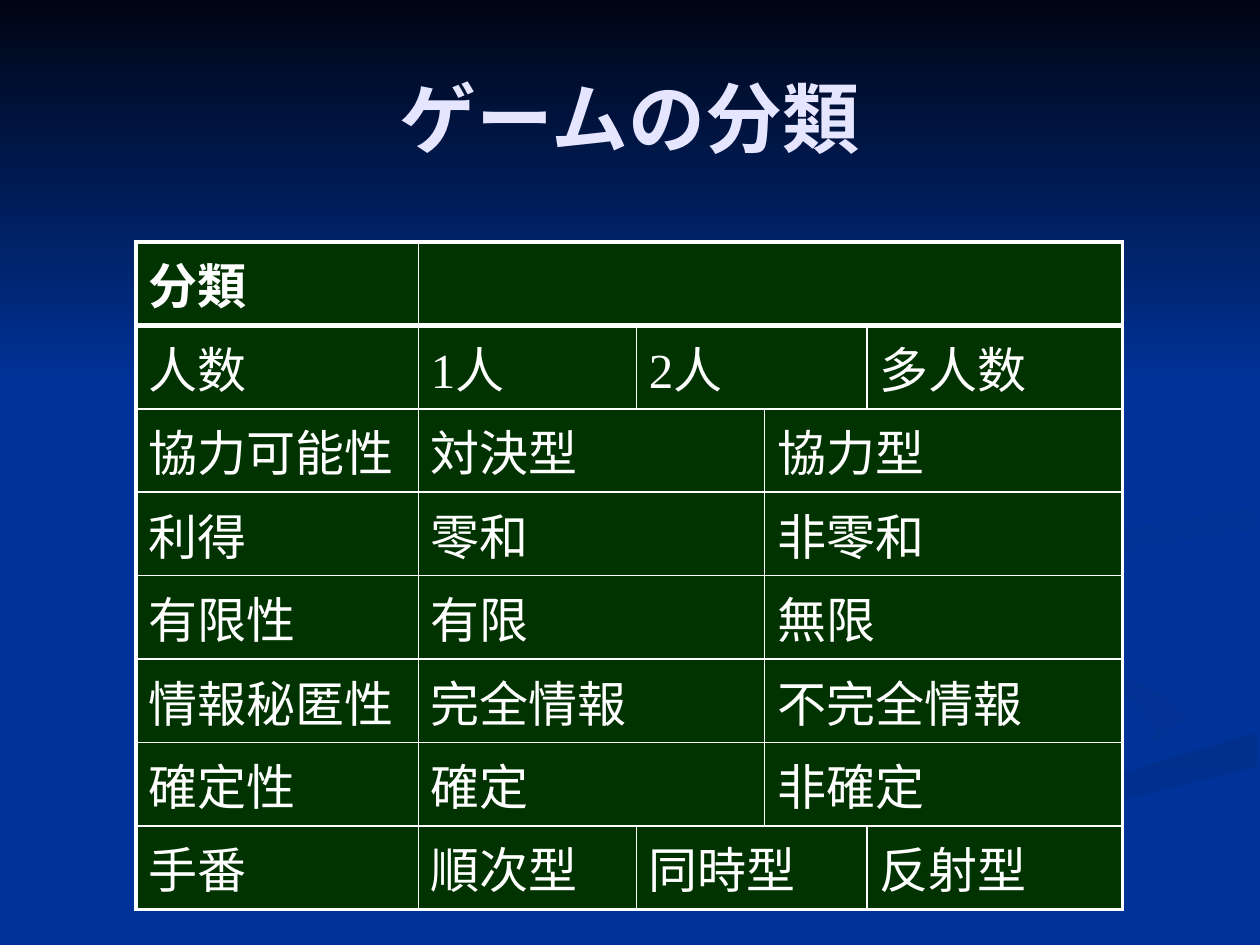
from lxml import etree
from pptx import Presentation
from pptx.dml.color import RGBColor
from pptx.enum.shapes import MSO_SHAPE
from pptx.enum.text import MSO_ANCHOR, PP_ALIGN
from pptx.oxml.ns import qn
from pptx.util import Inches, Pt

RECT = MSO_SHAPE.RECTANGLE
MIDDLE = MSO_ANCHOR.MIDDLE
LEFT, CENTER = PP_ALIGN.LEFT, PP_ALIGN.CENTER
FONT = "Times New Roman"
BLUE, GREEN, WHITE = "003399", "003300", "FFFFFF"


def rgb(code):
    return RGBColor.from_string(code)


def paint(shape, stops, angle):
    """Fill a shape with one colour or a two-stop gradient, clockwise angle."""
    shape.shadow.inherit = False
    shape.line.fill.background()
    if len(stops) == 1:
        shape.fill.solid()
        shape.fill.fore_color.rgb = rgb(stops[0])
        return
    shape.fill.gradient()
    shape.fill.gradient_angle = (360 - angle) % 360
    for stop, code in zip(shape.fill.gradient_stops, stops):
        stop.color.rgb = rgb(code)


prs = Presentation()
prs.slide_width, prs.slide_height = Inches(10), Inches(7.5)
slide = prs.slides.add_slide(prs.slide_layouts[5])
slide.background.fill.solid()
slide.background.fill.fore_color.rgb = rgb(BLUE)
shapes = slide.shapes

# Background swirls: colours, angle, outline in hundredths of an inch
swirls = [
    ((BLUE, "003193"), 0, [
        (781, 553), (682, 519), (587, 481), (575, 459), (593, 491),
        (728, 535), (786, 566), (727, 602), (499, 661), (300, 749),
        (361, 749), (594, 656), (786, 601), (800, 581)]),
    ((BLUE, "003193"), 45, [
        (943, 570), (919, 547), (870, 530), (758, 498), (724, 464),
        (746, 500), (838, 536), (900, 557), (918, 581), (894, 605),
        (932, 589)]),
    (("002F8C", BLUE), 90, [
        (519, 747), (503, 749), (571, 749), (695, 692), (821, 651),
        (998, 609), (998, 581), (903, 610), (764, 647), (630, 693)]),
    ((BLUE,), 0, [
        (725, 464), (759, 498), (871, 530), (931, 553), (943, 570),
        (892, 605), (663, 668), (477, 749), (519, 747), (696, 669),
        (999, 581), (999, 538), (832, 498), (781, 463), (850, 427),
        (999, 402), (999, 387), (788, 422)]),
    (("003091", BLUE), 45, [
        (781, 460), (797, 483), (826, 496), (805, 472), (843, 448),
        (936, 429), (998, 420), (998, 402), (849, 427), (799, 442)]),
    (("002F8E", BLUE), 45, [
        (683, 430), (825, 402), (894, 344), (843, 275), (762, 233),
        (846, 279), (889, 335), (842, 378), (649, 420), (577, 462),
        (622, 500), (593, 470), (624, 444)]),
]
for stops, angle, points in swirls:
    pen = shapes.build_freeform(*points[0], scale=Inches(0.01))
    pen.add_line_segments(points[1:], close=True)
    paint(pen.convert_to_shape(), stops, angle)

sky = shapes.add_shape(RECT, 0, 0, Inches(10), Inches(3.08))
paint(sky, ("000514", BLUE), 90)

# Title, brought in front of the background
title = shapes.title
shapes.element.append(title.element)
title.left, title.top = Inches(0.5), Inches(0.3)
title.width, title.height = Inches(9), Inches(1.25)
title.text_frame.text = "ゲームの分類"
title.text_frame.vertical_anchor = MIDDLE
para = title.text_frame.paragraphs[0]
para.alignment = CENTER
para.font.color.rgb = rgb("E5E5FF")
for key, value in {"name": FONT, "size": Pt(44), "bold": True}.items():
    setattr(para.font, key, value)

# Classification table; the number of entries in a row decides its spans
rows = [
    ("分類", ""),
    ("人数", "1人", "2人", "多人数"),
    ("協力可能性", "対決型", "協力型"),
    ("利得", "零和", "非零和"),
    ("有限性", "有限", "無限"),
    ("情報秘匿性", "完全情報", "不完全情報"),
    ("確定性", "確定", "非確定"),
    ("手番", "順次型", "同時型", "反射型"),
]
spans = {2: (1, 4), 3: (1, 2, 2), 4: (1, 1, 2, 1)}
widths = [2.24, 1.73, 1.02, 0.81, 2.03]
high = 0.66
last = len(rows) - 1
frame = shapes.add_table(len(rows), len(widths), Inches(1.08), Inches(1.92),
                         Inches(sum(widths)), Inches(high * len(rows)))
table = frame.table
table.first_row = table.horz_banding = False
for col, width in zip(table.columns, widths):
    col.width = Inches(width)

for r, texts in enumerate(rows):
    table.rows[r].height = Inches(high)
    start = 0
    for text, span in zip(texts, spans[len(texts)]):
        end = start + span
        cell = table.cell(r, start)
        if span > 1:
            cell.merge(table.cell(r, end - 1))
        cell.text = text
        para = cell.text_frame.paragraphs[0]
        para.alignment = LEFT
        para.font.color.rgb = rgb(WHITE)
        for key, value in {"name": FONT, "size": Pt(28), "bold": r == 0}.items():
            setattr(para.font, key, value)
        edges = {
            "a:lnL": 2.25 if start == 0 else 1,
            "a:lnR": 2.25 if end == len(widths) else 1,
            "a:lnT": {0: 2.25, 1: 3}.get(r, 1),
            "a:lnB": {0: 3, last: 2.25}.get(r, 1),
        }
        for c in range(start, end):
            part = table.cell(r, c)
            part.fill.solid()
            part.fill.fore_color.rgb = rgb(GREEN)
            props = part._tc.get_or_add_tcPr()
            for i, (tag, weight) in enumerate(edges.items()):
                line = etree.Element(qn(tag), w=str(Pt(weight)))
                fill = etree.SubElement(line, qn("a:solidFill"))
                etree.SubElement(fill, qn("a:srgbClr"), val=WHITE)
                props.insert(i, line)
        start = end

prs.save("out.pptx")
